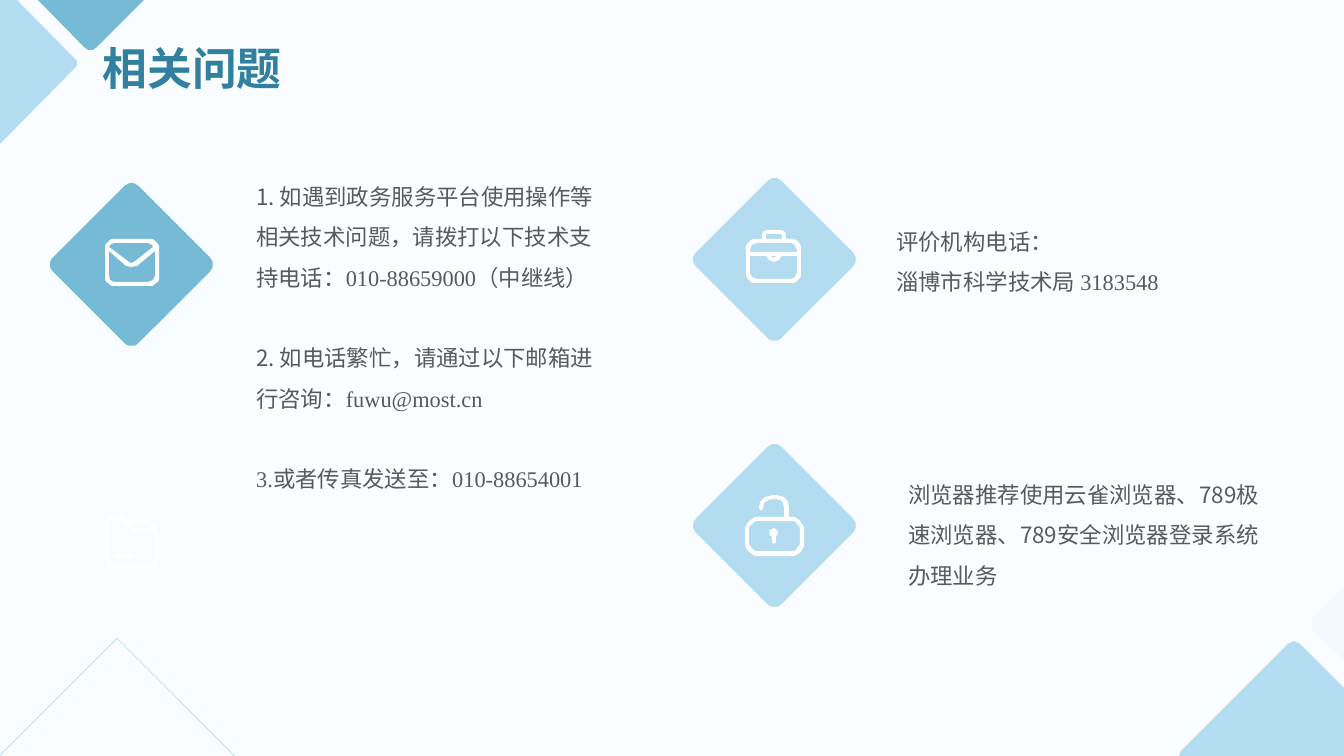
"""Build the FAQ slide with contact details, icons and corner diamonds."""
import math
import pptx
import pptx.dml.color
import pptx.enum.shapes
import pptx.enum.text
import pptx.oxml.ns
import pptx.util
from lxml import etree

PX = 6804
SANS, SERIF = "Noto Sans CJK SC", "Times New Roman"
PALE, TEAL, DARK, GREY, WHITE = "B3DCF0", "77BAD5", "31809F", "595959", "FFFFFF"
color = pptx.dml.color.RGBColor.from_string

deck = pptx.Presentation()
deck.slide_width, deck.slide_height = 1344 * PX, 756 * PX
slide = deck.slides.add_slide(deck.slide_layouts[5])
slide.background.fill.solid()
slide.background.fill.fore_color.rgb = color("FAFDFF")
shapes = slide.shapes


def ring(x, y, w, h, r):
    """Return the points of a rounded rectangle."""
    hubs = [(x + w - r, y + h - r), (x + r, y + h - r), (x + r, y + r), (x + w - r, y + r)]
    return [
        (round(cx + r * math.cos(math.radians(90 * i + a)), 2),
         round(cy + r * math.sin(math.radians(90 * i + a)), 2))
        for i, (cx, cy) in enumerate(hubs) for a in range(0, 91, 15)
    ]


def draw(fill, *loops):
    """Draw closed loops as one filled outline."""
    pen = shapes.build_freeform(*loops[0][0], scale=PX)
    for i, loop in enumerate(loops):
        if i:
            pen.move_to(*loop[0])
        pen.add_line_segments(loop[1:], close=True)
    form = pen.convert_to_shape()
    form.shadow.inherit = False
    form.fill.solid()
    form.fill.fore_color.rgb = color(fill)
    form.line.fill.background()


draw(PALE, [(0, 0), (17, 0), (74, 58), (77, 61), (77, 65), (74, 69), (0, 144)])
draw(PALE, [(0, 755), (117, 638), (235, 756), (234, 756), (117, 639), (0, 756)])
draw(TEAL, [(38, 0), (144, 0), (97, 47), (93, 50), (88, 50), (84, 47)])
draw("F2F9FF", [(1344, 587), (1344, 660), (1313, 630), (1312, 627), (1312, 621), (1313, 618)])
draw(PALE, [(1294, 641), (1300, 644), (1344, 688), (1344, 756), (1179, 756), (1181, 751), (1288, 644)])

for left, top, fill in [(71, 204, TEAL), (714, 199, PALE), (714, 465, PALE)]:
    tile = shapes.add_shape(pptx.enum.shapes.MSO_SHAPE.ROUNDED_RECTANGLE,
                            left * PX, top * PX, 121 * PX, 121 * PX)
    tile.rotation = 45
    tile.adjustments[0] = 0.08
    tile.shadow.inherit = False
    tile.fill.solid()
    tile.fill.fore_color.rgb = color(fill)
    tile.line.fill.background()

flap = [(109, 247), (110, 245), (114, 243), (148, 243), (152, 245), (153, 247),
        (134, 262), (131, 263), (129, 262)]
front = [(109, 251), (126, 266), (131, 267), (137, 266), (155, 251), (155, 276),
         (153, 280), (148, 282), (114, 282), (110, 280), (109, 276)]
draw(WHITE, ring(105, 239, 54, 47, 9), flap, front)

grip = [(762, 239), (762, 235), (763, 232), (767, 230), (781, 230), (785, 232), (786, 235),
        (786, 239), (782, 239), (782, 235), (781, 234), (767, 234), (766, 235), (766, 239)]
lid = [(750, 252), (750, 250), (752, 245), (757, 243), (791, 243), (795, 245), (797, 250), (797, 252)]
case = [(750, 256), (766, 256), (769, 260), (774, 262), (779, 260), (782, 256), (797, 256),
        (797, 273), (795, 277), (791, 279), (757, 279), (752, 277), (750, 273)]
clasp = [(770, 256), (777, 256), (774, 258)]
draw(WHITE, ring(746, 239, 55, 44, 10), grip, lid, case, clasp)

edge = [(122, 516), (129, 520), (148, 520), (154, 523), (156, 528), (159, 536), (159, 560),
        (156, 566), (151, 568), (113, 568), (107, 566), (105, 560), (105, 524), (107, 518), (113, 516)]
page = [(122, 520), (113, 520), (110, 521), (109, 524), (109, 560), (113, 564), (151, 564),
        (155, 560), (155, 536), (151, 532), (136, 532), (128, 527), (126, 523)]
tab = [(130, 524), (148, 524), (152, 528), (134, 528), (132, 527)]
draw(WHITE, edge, page, tab, ring(114, 554, 20, 4, 2))

hook = [(789, 517), (789, 508), (788, 502), (784, 497), (776, 495), (773, 495), (765, 497),
        (760, 502), (759, 508), (761, 511), (763, 508), (764, 503), (768, 500), (773, 499),
        (776, 499), (781, 500), (783, 503), (784, 508), (784, 517)]
hole = [(774, 528), (777, 530), (778, 533), (776, 537), (776, 542), (774, 544),
        (772, 542), (772, 537), (769, 534), (770, 530)]
draw(WHITE, ring(745, 517, 59, 39, 13), ring(749, 521, 51, 30, 9), hook)
draw(WHITE, hole)

help_text = [
    [("1. 如遇到政务服务平台使用操作等相关技术问题，请拨打以下技术支持电话：", SANS),
     ("010-88659000", SERIF), ("（中继线）", SANS)],
    [("2. 如电话繁忙，请通过以下邮箱进行咨询：", SANS), ("fuwu@most.cn", SERIF)],
    [("3.或者传真发送至：010-88654001", SERIF)],
]
phone_text = [[("评价机构电话：", SANS)],
              [("淄博市科学技术局 ", SANS), ("3183548", SERIF)]]
web_text = [[("浏览器推荐使用云雀浏览器、789极速浏览器、789安全浏览器登录系统办理业务", SANS)]]

title = shapes.title
title.left, title.top, title.width, title.height = 89 * PX, 34 * PX, 207 * PX, 67 * PX
blocks = [(title, 24, 28.8, 0, DARK, [[("相关问题", SANS)]])]
for left, top, high, gap, paras in [(243, 163, 339, 21.6, help_text),
                                    (883, 208, 95, 0, phone_text),
                                    (895, 461, 136, 0, web_text)]:
    box = shapes.add_textbox(left * PX, top * PX, 384 * PX, high * PX)
    blocks.append((box, 12, 21.6, gap, GREY, paras))

for box, size, pitch, gap, ink, paras in blocks:
    frame = box.text_frame
    frame.word_wrap = box is not title
    frame.auto_size = pptx.enum.text.MSO_AUTO_SIZE.NONE
    frame.vertical_anchor = pptx.enum.text.MSO_ANCHOR.TOP
    for i, runs in enumerate(paras):
        para = frame.add_paragraph() if i else frame.paragraphs[0]
        para.alignment = pptx.enum.text.PP_ALIGN.LEFT
        para.line_spacing = pptx.util.Pt(pitch)
        para.space_before = pptx.util.Pt(gap if i else 0)
        for text, face in runs:
            run = para.add_run()
            run.text = text
            run.font.size = pptx.util.Pt(size)
            run.font.bold = box is title
            run.font.color.rgb = color(ink)
            run.font.name = face
            east = etree.SubElement(run.font._element, pptx.oxml.ns.qn("a:ea"))
            east.set("typeface", SANS)

deck.save("out.pptx")
